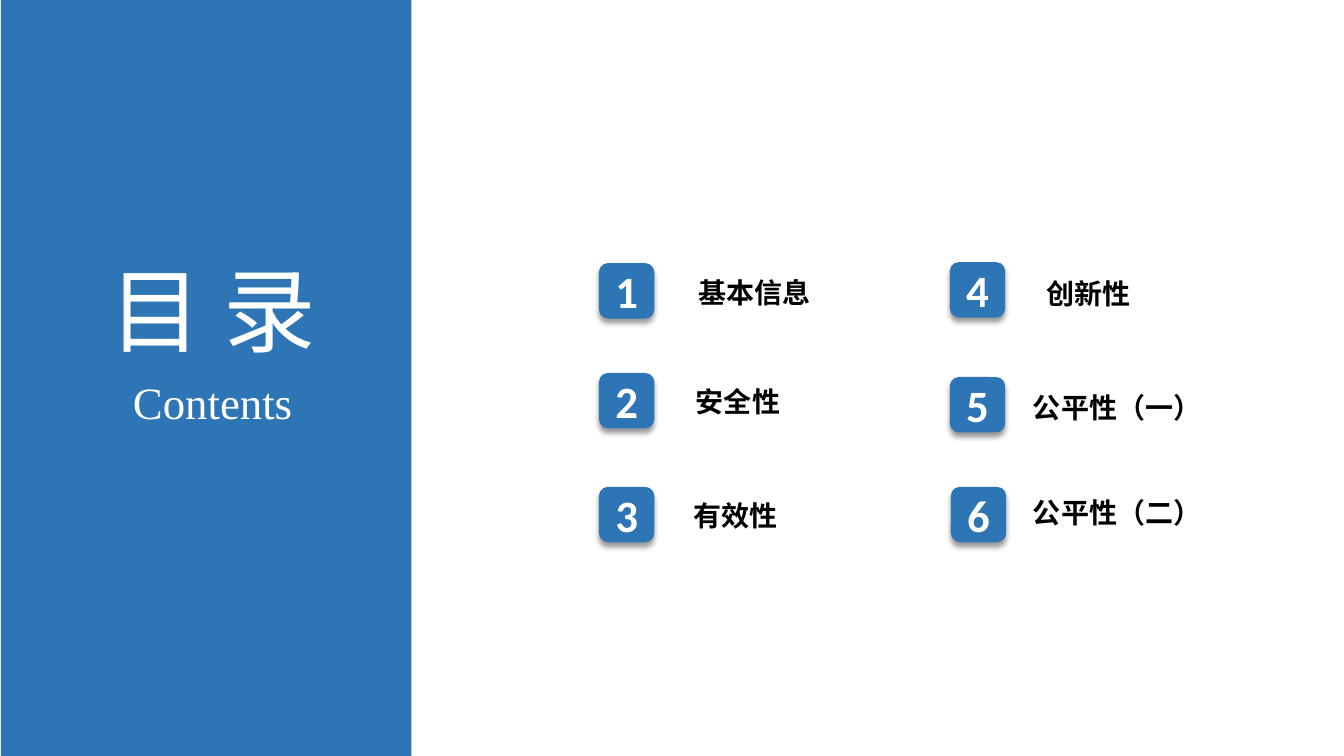
from lxml import etree
from pptx import Presentation
from pptx import util as u
from pptx.dml.color import RGBColor
from pptx.enum import shapes, text
from pptx.oxml.ns import qn

BLUE, WHITE, BLACK = "2E75B6", "FFFFFF", "000000"
CJK, SERIF, SANS = "Noto Sans CJK SC", "Times New Roman", "Calibri"
BADGE_SIZE = 0.55
LABEL_HEIGHT = 0.44


def color(value):
    return RGBColor.from_string(value)


class ContentsSlide:
    def __init__(self, presentation):
        self.slide = presentation.slides.add_slide(presentation.slide_layouts[6])

    def block(self, preset, left, top, width, height):
        shape = self.slide.shapes.add_shape(
            preset, *(u.Inches(n) for n in (left, top, width, height)))
        shape.shadow.inherit = False
        shape.fill.solid()
        shape.fill.fore_color.rgb = color(BLUE)
        shape.line.fill.background()
        return shape

    def set_text(self, frame, content, size, font, fill, bold=False, centered=True):
        paragraph = frame.paragraphs[0]
        paragraph.text = content
        paragraph.alignment = text.PP_ALIGN.CENTER if centered else text.PP_ALIGN.LEFT
        paragraph.font.size = u.Pt(size)
        paragraph.font.bold = bold
        paragraph.font.color.rgb = color(fill)
        paragraph.font.name = font
        # East Asian glyphs need their own typeface entry
        defaults = paragraph._p.pPr.find(qn("a:defRPr"))
        etree.SubElement(defaults, qn("a:ea"), typeface=font)

    def label(self, content, left, top, width, height, size, font, fill,
              bold=False, wrap=False):
        box = self.slide.shapes.add_textbox(
            *(u.Inches(n) for n in (left, top, width, height)))
        box.text_frame.word_wrap = wrap
        box.text_frame.auto_size = text.MSO_AUTO_SIZE.SHAPE_TO_FIT_TEXT
        self.set_text(box.text_frame, content, size, font, fill, bold,
                      centered=not wrap)

    def badge(self, number, left, top):
        shape = self.block(shapes.MSO_SHAPE.ROUNDED_RECTANGLE,
                           left, top, BADGE_SIZE, BADGE_SIZE)
        self.drop_shadow(shape)
        frame = shape.text_frame
        frame.vertical_anchor = text.MSO_ANCHOR.MIDDLE
        self.set_text(frame, str(number), 32, SANS, WHITE, bold=True)

    def drop_shadow(self, shape):
        effects = shape._element.spPr.find(qn("a:effectLst"))
        shadow = etree.SubElement(
            effects, qn("a:outerShdw"), blurRad=str(u.Pt(4)), dist=str(u.Pt(3)),
            dir="5400000", algn="t", rotWithShape="0")
        tint = etree.SubElement(shadow, qn("a:srgbClr"), val=BLACK)
        etree.SubElement(tint, qn("a:alpha"), val="40000")


def main():
    presentation = Presentation()
    presentation.slide_width = u.Inches(13.33)
    presentation.slide_height = u.Inches(7.5)
    contents = ContentsSlide(presentation)

    # Title panel
    contents.block(shapes.MSO_SHAPE.RECTANGLE, 0.01, 0, 4.07, 7.5)
    contents.label("目 录", 0.85, 2.46, 2.52, 1.21, 66, CJK, WHITE)
    contents.label("Contents", 1.21, 3.67, 1.8, 0.64, 32, SERIF, WHITE)

    # Sections: badge left and top, label text, left, top, width and wrapping
    sections = [
        (5.94, 2.61, "基本信息", 6.83, 2.68, 2.21, True),
        (5.94, 3.7, "安全性", 6.8, 3.77, 1.04, False),
        (5.94, 4.83, "有效性", 6.78, 4.9, 1.04, False),
        (9.42, 2.6, "创新性", 10.28, 2.69, 1.04, False),
        (9.42, 3.74, "公平性（一）", 10.14, 3.82, 1.88, False),
        (9.43, 4.83, "公平性（二）", 10.14, 4.87, 1.88, False),
    ]
    for number, section in enumerate(sections, start=1):
        badge_left, badge_top, name, left, top, width, wrap = section
        contents.badge(number, badge_left, badge_top)
        contents.label(name, left, top, width, LABEL_HEIGHT, 20, CJK, BLACK,
                       bold=True, wrap=wrap)

    presentation.save("out.pptx")


if __name__ == "__main__":
    main()
